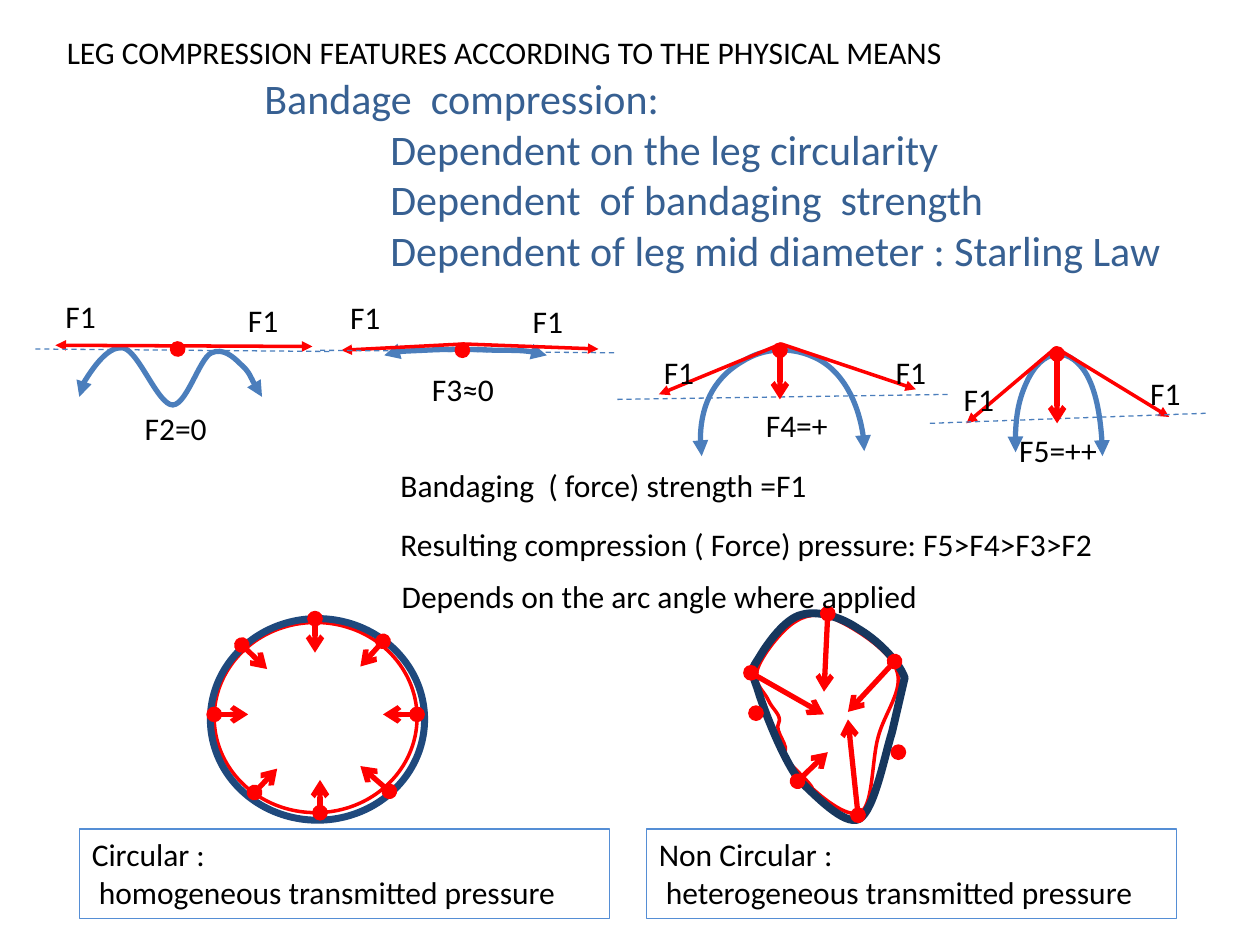
import dataclasses

import lxml.etree
import pptx
import pptx.dml.color
import pptx.enum.dml
import pptx.enum.shapes
import pptx.enum.text
import pptx.oxml.ns
import pptx.util

Inches = pptx.util.Inches
Pt = pptx.util.Pt
qualified = pptx.oxml.ns.qn


@dataclasses.dataclass(frozen=True)
class Theme:
    font: str = "Calibri"
    body_size: float = 18
    heading_size: float = 24
    text: str = "000000"
    heading: str = "376092"
    force: str = "FF0000"
    bandage: str = "4B7EBC"
    circle: str = "1F497D"
    outline: str = "17375E"
    box: str = "558ED5"
    background: str = "FFFFFF"


THEME = Theme()


def color(value):
    return pptx.dml.color.RGBColor.from_string(value)


def style_line(shape, line_color, width, head=None, tail=None, dashed=False):
    shape.line.color.rgb = color(line_color)
    shape.line.width = Pt(width)
    if dashed:
        shape.line.dash_style = pptx.enum.dml.MSO_LINE.DASH
    line = shape.line._get_or_add_ln()
    for tag, kind in (("a:headEnd", head), ("a:tailEnd", tail)):
        if kind:
            lxml.etree.SubElement(line, qualified(tag), type=kind)


def style_fill(shape, fill):
    shape.shadow.inherit = False
    if fill:
        shape.fill.solid()
        shape.fill.fore_color.rgb = color(fill)
    else:
        shape.fill.background()


def write(shape, lines, size=THEME.body_size, text_color=THEME.text, indents=None):
    frame = shape.text_frame
    frame.word_wrap = True
    frame.auto_size = pptx.enum.text.MSO_AUTO_SIZE.SHAPE_TO_FIT_TEXT
    frame.vertical_anchor = pptx.enum.text.MSO_ANCHOR.TOP
    for index, line in enumerate(lines):
        paragraph = frame.paragraphs[0] if index == 0 else frame.add_paragraph()
        paragraph.alignment = pptx.enum.text.PP_ALIGN.LEFT
        if indents:
            properties = paragraph._p.get_or_add_pPr()
            properties.set("marL", str(Inches(indents[index])))
            properties.set("indent", "0")
        run = paragraph.add_run()
        run.text = line
        run.font.name = THEME.font
        run.font.size = Pt(size)
        run.font.color.rgb = color(text_color)


def add_text(slide, left, top, width, text):
    box = slide.shapes.add_textbox(Inches(left), Inches(top), Inches(width), Inches(0.4))
    write(box, [text])


def add_title(slide, text):
    title = slide.shapes.title
    title.left, title.top = Inches(0.43), Inches(0.21)
    title.width, title.height = Inches(9.25), Inches(0.4)
    write(title, [text])


def add_heading(slide):
    box = slide.shapes.add_textbox(Inches(1), Inches(0.53), Inches(8.34), Inches(2.12))
    lines = [
        "Bandage  compression:",
        "Dependent on the leg circularity",
        "Dependent  of bandaging  strength",
        "Dependent of leg mid diameter : Starling Law",
    ]
    write(box, lines, THEME.heading_size, THEME.heading, [1, 2, 2, 2])


def add_preset(slide, kind, left, top, width, height, line_color, line_width, fill=None):
    shape = slide.shapes.add_shape(
        kind, Inches(left), Inches(top), Inches(width), Inches(height))
    style_fill(shape, fill)
    style_line(shape, line_color, line_width)
    return shape


def add_line(slide, start, end, line_color, width, **ends):
    connector = slide.shapes.add_connector(
        pptx.enum.shapes.MSO_CONNECTOR.STRAIGHT,
        Inches(start[0]), Inches(start[1]), Inches(end[0]), Inches(end[1]))
    style_line(connector, line_color, width, **ends)
    lxml.etree.SubElement(connector._element.spPr, qualified("a:effectLst"))


def add_pressure(slide, start, end):
    add_line(slide, start, end, THEME.force, 3, head="oval", tail="arrow")


def add_dot(slide, start, end):
    add_line(slide, start, end, THEME.force, 3, head="oval")


def add_outline(slide, box, points, line_color, width, closed=False, fill=None):
    left, top, right, bottom = box
    builder = slide.shapes.build_freeform(Inches(left), Inches(top), scale=1.0)
    builder.add_line_segments([(Inches(right), Inches(bottom))], close=closed)
    shape = builder.convert_to_shape()
    geometry = next(shape._element.iter(qualified("a:path")))
    for child in list(geometry):
        geometry.remove(child)
    tags = {2: "a:lnTo", 6: "a:cubicBezTo"}
    for index, segment in enumerate(points):
        tag = tags[len(segment)] if index else "a:moveTo"
        command = lxml.etree.SubElement(geometry, qualified(tag))
        for x, y in zip(segment[::2], segment[1::2]):
            lxml.etree.SubElement(
                command, qualified("a:pt"),
                x=str(Inches(x) - Inches(left)), y=str(Inches(y) - Inches(top)))
    if closed:
        lxml.etree.SubElement(geometry, qualified("a:close"))
    style_fill(shape, fill)
    end = None if closed else "triangle"
    style_line(shape, line_color, width, head=end, tail=end)


def add_bandage(slide, baseline, box, arc, force):
    add_outline(slide, box, arc, THEME.bandage, 3)
    columns, rows = zip(*force)
    hull = (min(columns), min(rows), max(columns), max(rows))
    add_outline(slide, hull, force, THEME.force, 2)
    add_line(slide, *baseline, THEME.bandage, 0.75, dashed=True)


def add_bandages(slide):
    add_bandage(slide, ((2.54, 2.78), (4.9, 2.8)), (3.04, 2.77, 4.34, 2.82), [
        (3.05, 2.82), (3, 2.81, 3.13, 2.79, 3.37, 2.78),
        (3.54, 2.77, 3.74, 2.77, 3.93, 2.78), (4.17, 2.78, 4.34, 2.8, 4.34, 2.82),
    ], [(4.75, 2.77), (3.68, 2.73), (2.71, 2.78)])
    add_bandage(slide, ((4.9, 3.17), (7.55, 3.13)), (5.56, 2.77, 6.86, 3.62), [
        (5.57, 3.62), (5.52, 3.32, 5.65, 3.01, 5.89, 2.87),
        (6.06, 2.76, 6.27, 2.75, 6.45, 2.83), (6.69, 2.93, 6.86, 3.29, 6.86, 3.58),
    ], [(7.27, 3.09), (6.2, 2.73), (5.23, 3.13)])
    add_bandage(slide, ((7.38, 3.36), (9.57, 3.28)), (8.06, 2.81, 8.75, 3.62), [
        (8.06, 3.59), (8.05, 3.39, 8.08, 3.18, 8.15, 3.03),
        (8.27, 2.77, 8.47, 2.74, 8.61, 2.95), (8.7, 3.09, 8.75, 3.4, 8.75, 3.62),
    ], [(9.28, 3.31), (8.38, 2.76), (7.67, 3.36)])
    add_bandage(slide, ((0.28, 2.77), (2.64, 2.79)), (0.62, 2.76, 2.08, 3.21), [
        (0.63, 3.15), (0.57, 3.13, 0.85, 2.75, 0.97, 2.76),
        (1.09, 2.77, 1.23, 3.16, 1.35, 3.21), (1.47, 3.26, 1.58, 2.84, 1.68, 2.8),
        (1.77, 2.76, 1.85, 2.83, 1.91, 2.89), (1.98, 2.95, 2.05, 3.12, 2.08, 3.15),
    ], [(2.48, 2.75), (0.44, 2.74)])
    add_dot(slide, (1.41, 2.77), (1.43, 2.8))
    add_dot(slide, (3.67, 2.78), (3.69, 2.81))
    add_pressure(slide, (6.19, 2.78), (6.19, 3.17))
    add_pressure(slide, (8.39, 2.81), (8.39, 3.36))
    for left, top, width in (
            (0.42, 2.31, 0.59), (1.87, 2.34, 0.56), (2.68, 2.32, 0.59),
            (4.13, 2.35, 0.56), (5.17, 2.75, 0.54), (7.01, 2.75, 0.54),
            (7.55, 2.97, 0.47), (9.03, 2.92, 0.54)):
        add_text(slide, left, top, width, "F1")
    for left, top, width, text in (
            (1.05, 3.2, 0.8, "F2=0"), (3.33, 2.89, 0.8, "F3≈0"),
            (5.98, 3.17, 0.88, "F4=+"), (7.99, 3.37, 1.02, "F5=++")):
        add_text(slide, left, top, width, text)


def add_circular_leg(slide):
    oval = pptx.enum.shapes.MSO_SHAPE.OVAL
    add_preset(slide, oval, 1.7, 4.94, 1.61, 1.51, THEME.force, 2, THEME.background)
    add_preset(slide, oval, 1.67, 4.91, 1.7, 1.6, THEME.circle, 4)
    for start, end in (
            ((2.5, 4.91), (2.5, 5.18)), ((2.54, 6.45), (2.54, 6.19)),
            ((3.31, 5.67), (3.04, 5.67)), ((1.7, 5.67), (1.97, 5.67)),
            ((3.04, 5.09), (2.86, 5.29)), ((2.02, 6.29), (2.2, 6.1)),
            ((1.92, 5.12), (2.12, 5.31)), ((3.09, 6.28), (2.86, 6.08))):
        add_pressure(slide, start, end)


def add_irregular_leg(slide):
    add_outline(slide, (6, 4.88, 7.13, 6.45), [
        (6.01, 5.32),
        (6.04, 5.21, 6.21, 4.99, 6.32, 4.93), (6.43, 4.86, 6.55, 4.87, 6.68, 4.94),
        (6.82, 5.01, 7.08, 5.18, 7.12, 5.33), (7.17, 5.48, 7.02, 5.66, 6.97, 5.85),
        (6.92, 6.03, 6.93, 6.37, 6.84, 6.44), (6.75, 6.51, 6.55, 6.35, 6.45, 6.26),
        (6.43, 6.2, 6.21, 6.03, 6.22, 5.97), (6.28, 5.94, 6.14, 5.8, 6.18, 5.74),
        (6.21, 5.68, 6.13, 5.63, 6.1, 5.56), (6.07, 5.49, 5.97, 5.42, 6.01, 5.32),
    ], THEME.force, 2, closed=True, fill=THEME.background)
    add_outline(slide, (5.97, 4.87, 7.18, 6.51), [
        (6.03, 5.21),
        (6.09, 5.11, 6.23, 4.91, 6.36, 4.88), (6.49, 4.84, 6.68, 4.9, 6.81, 4.99),
        (6.95, 5.07, 7.13, 5.24, 7.18, 5.38), (7.08, 5.81),
        (7.02, 6, 6.94, 6.43, 6.82, 6.5), (6.7, 6.56, 6.46, 6.3, 6.35, 6.2),
        (6.22, 6.04, 6.06, 5.63, 6.01, 5.46), (5.95, 5.3, 5.97, 5.31, 6.03, 5.21),
    ], THEME.outline, 4.5, closed=True)
    add_dot(slide, (6, 5.66), (6.01, 5.66))
    add_dot(slide, (7.13, 5.97), (7.14, 5.97))
    for start, end in (
            ((7.1, 5.25), (6.73, 5.65)), ((6.33, 6.2), (6.57, 5.97)),
            ((5.96, 5.34), (6.54, 5.67)), ((6.57, 4.87), (6.54, 5.49)),
            ((6.81, 6.47), (6.73, 5.71))):
        add_pressure(slide, start, end)


def add_caption(slide, left, lines):
    rectangle = pptx.enum.shapes.MSO_SHAPE.RECTANGLE
    box = add_preset(slide, rectangle, left, 6.58, 4.21, 0.71, THEME.box, 0.75)
    write(box, lines)


def main():
    presentation = pptx.Presentation()
    presentation.slide_width, presentation.slide_height = Inches(10), Inches(7.5)
    slide = presentation.slides.add_slide(presentation.slide_layouts[5])
    add_title(slide, "LEG COMPRESSION FEATURES ACCORDING TO THE PHYSICAL MEANS")
    add_heading(slide)
    add_circular_leg(slide)
    add_irregular_leg(slide)
    add_caption(slide, 0.63, ["Circular :", " homogeneous transmitted pressure"])
    add_caption(slide, 5.13, ["Non Circular :", " heterogeneous transmitted pressure"])
    add_text(slide, 3.08, 3.65, 4.16, "Bandaging  ( force) strength =F1")
    add_text(slide, 3.08, 4.12, 6.6, "Resulting compression ( Force) pressure: F5>F4>F3>F2")
    add_text(slide, 3.09, 4.53, 6.6, "Depends on the arc angle where applied")
    add_bandages(slide)
    presentation.save("out.pptx")


if __name__ == "__main__":
    main()
